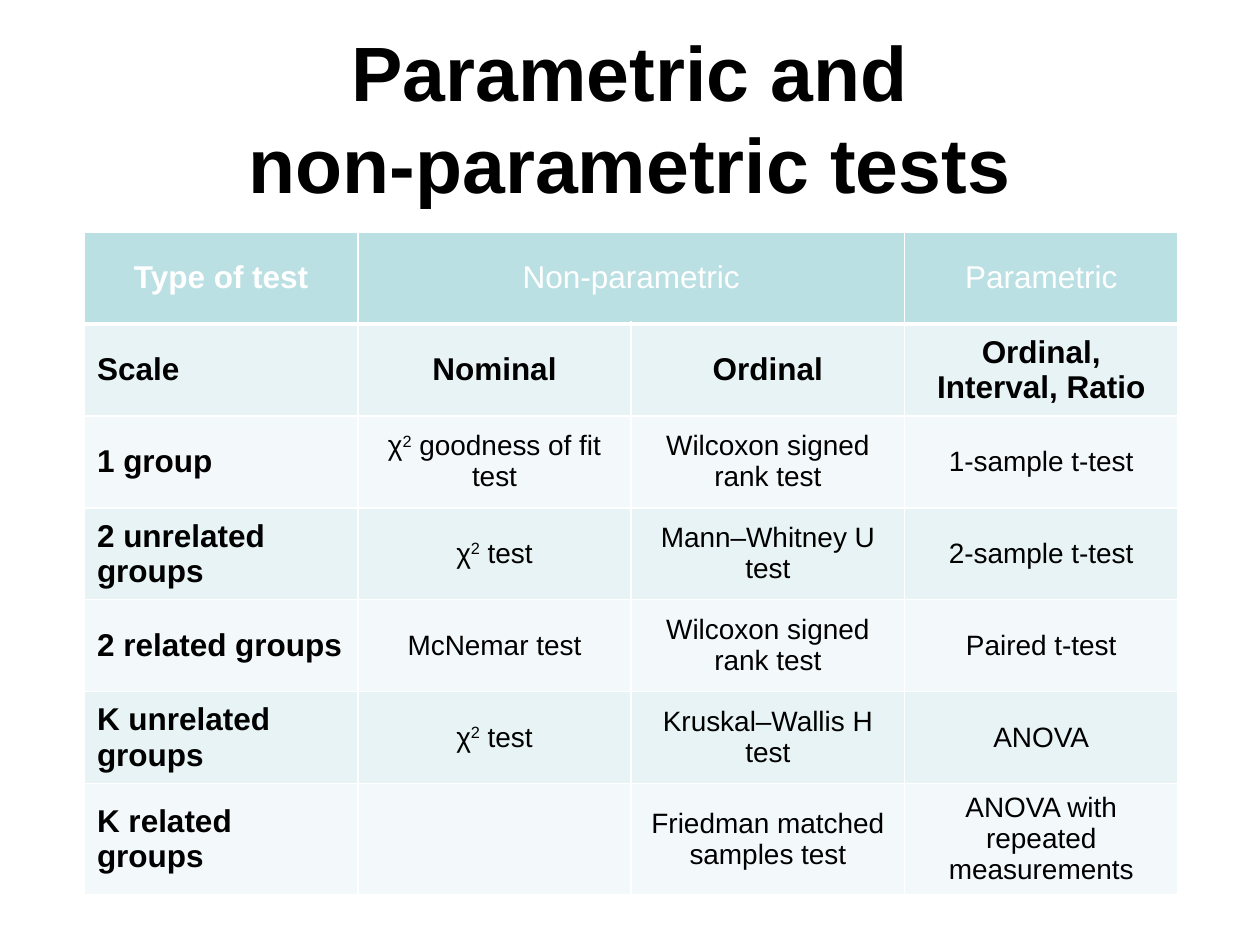
from lxml import etree
from pptx import Presentation
from pptx.dml.color import RGBColor
from pptx.enum.text import MSO_ANCHOR, PP_ALIGN
from pptx.oxml.ns import qn
from pptx.util import Inches, Pt

MIDDLE = MSO_ANCHOR.MIDDLE
LEFT, CENTER = PP_ALIGN.LEFT, PP_ALIGN.CENTER
FONT = "Arial"
WHITE, BLACK = "FFFFFF", "000000"
HEAD, DARK, LIGHT = "BBE0E3", "E7F3F4", "F3F9FA"

# Content: a tuple holds runs, every second one raised
TITLE = ["Parametric and", "non-parametric tests"]
CHI = ("χ", "2", " test")
ROWS = [
    ["Type of test", "Non-parametric", "", "Parametric"],
    ["Scale", "Nominal", "Ordinal", "Ordinal, Interval, Ratio"],
    ["1 group", ("χ", "2", " goodness of fit test"),
     "Wilcoxon signed rank test", "1-sample t-test"],
    ["2 unrelated groups", CHI, "Mann–Whitney U test", "2-sample t-test"],
    ["2 related groups", "McNemar test", "Wilcoxon signed rank test",
     "Paired t-test"],
    ["K unrelated groups", CHI, "Kruskal–Wallis H test", "ANOVA"],
    ["K related groups", "", "Friedman matched samples test",
     "ANOVA with repeated measurements"],
]
COL, ROW, LAST = 2.17, 0.73, 0.88


def color(code):
    return RGBColor.from_string(code)


def style(font, size, bold, code):
    font.name, font.size, font.bold = FONT, Pt(size), bold
    font.color.rgb = color(code)


def border(cell, side, width):
    props = cell._tc.get_or_add_tcPr()
    line = etree.SubElement(props, qn(f"a:ln{side}"), w=str(Pt(width)))
    fill = etree.SubElement(line, qn("a:solidFill"))
    etree.SubElement(fill, qn("a:srgbClr"), val=WHITE)


def write(cell, text, size, bold, code, align):
    para = cell.text_frame.paragraphs[0]
    para.alignment = align
    para.font.size = Pt(size)
    parts = text if isinstance(text, tuple) else (text,)
    for i, part in enumerate(parts):
        if part:
            run = para.add_run()
            run.text = part
            style(run.font, size, bold, code)
            if i % 2:
                run._r.get_or_add_rPr().set("baseline", "30000")


prs = Presentation()
prs.slide_width, prs.slide_height = Inches(10), Inches(7.5)
slide = prs.slides.add_slide(prs.slide_layouts[5])

# Title
title = slide.shapes.title
title.left, title.top = Inches(0.5), Inches(0.3)
title.width, title.height = Inches(9), Inches(1.25)
title.text_frame.vertical_anchor = MIDDLE
para = title.text_frame.paragraphs[0]
para.alignment = CENTER
for i, line in enumerate(TITLE):
    if i:
        para.add_line_break()
    run = para.add_run()
    run.text = line
    style(run.font, 44, True, BLACK)

# Table grid
count, wide = len(ROWS), len(ROWS[0])
table = slide.shapes.add_table(
    count, wide, Inches(0.67), Inches(1.84),
    Inches(COL * wide), Inches(ROW * (count - 1) + LAST)).table
for col in table.columns:
    col.width = Inches(COL)
for row in table.rows:
    row.height = Inches(ROW)
table.rows[count - 1].height = Inches(LAST)
table.cell(0, 1).merge(table.cell(0, 2))

# Table cells
for r, texts in enumerate(ROWS):
    for c, text in enumerate(texts):
        cell = table.cell(r, c)
        cell.vertical_anchor = MIDDLE
        for side in "LRTB":
            thick = (r == 0 and side == "B") or (r == 1 and side == "T")
            border(cell, side, 3 if thick else 1)
        cell.fill.solid()
        cell.fill.fore_color.rgb = color(
            HEAD if r == 0 else DARK if r % 2 else LIGHT)
        write(cell, text,
              size=18 if r < 2 or c == 0 else 16,
              bold=r == 1 or c == 0,
              code=BLACK if r else WHITE,
              align=LEFT if r and c == 0 else CENTER)

prs.save("out.pptx")
